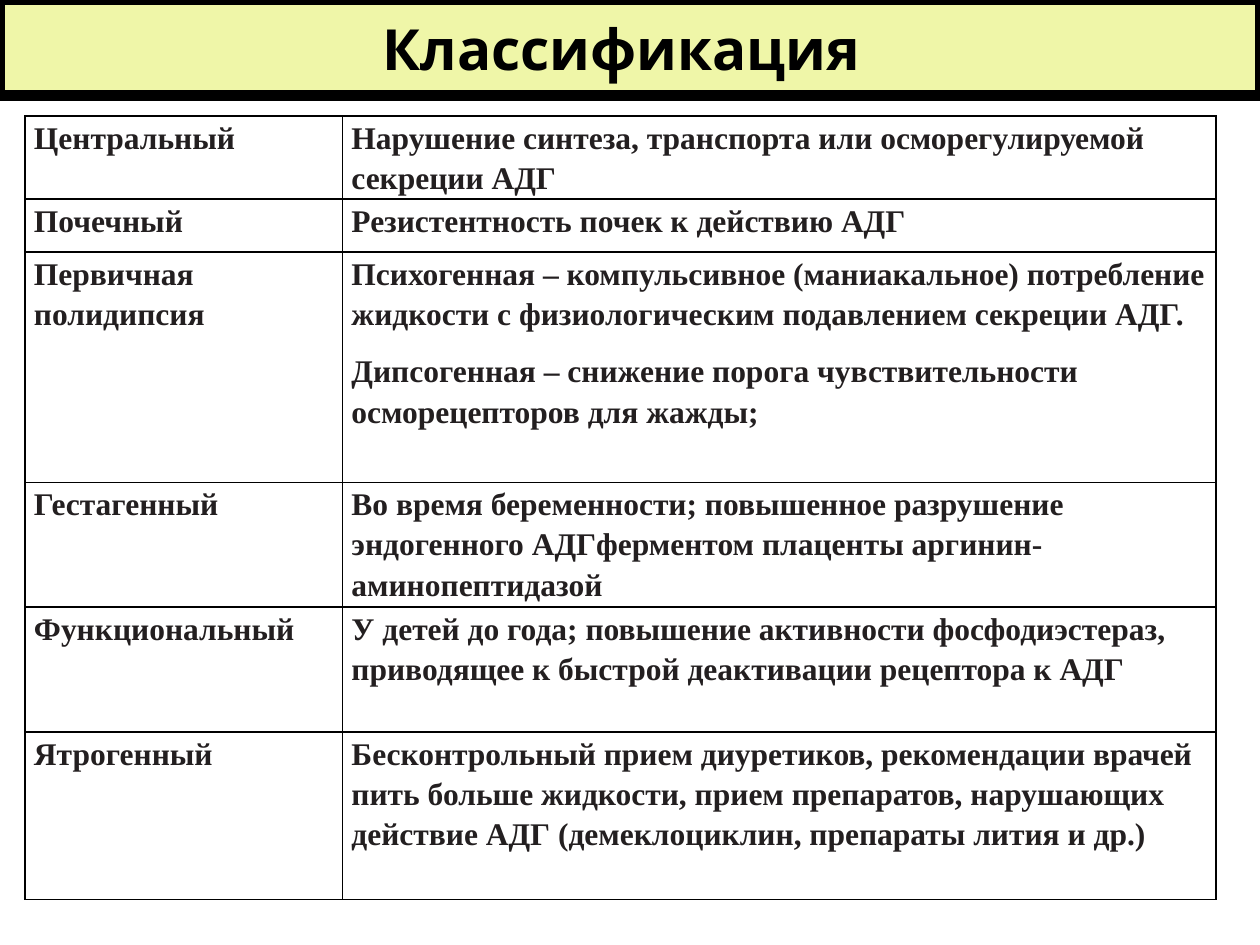
from dataclasses import dataclass

from lxml.etree import SubElement
from pptx import Presentation
from pptx.dml.color import RGBColor
from pptx.enum.shapes import MSO_SHAPE
from pptx.enum.text import MSO_ANCHOR, PP_ALIGN
from pptx.oxml.ns import qn
from pptx.util import Inches, Pt


@dataclass(frozen=True)
class Theme:
    banner: RGBColor = RGBColor.from_string("EFF6A8")
    black: RGBColor = RGBColor.from_string("000000")
    body: RGBColor = RGBColor.from_string("231F20")
    title_font: str = "Quicksand"
    body_font: str = "Times New Roman"
    title_size: Pt = Pt(32.4)
    body_size: Pt = Pt(18)


THEME = Theme()

# Row height in inches, type, paragraphs of its description
CLASSIFICATION = [
    (0.66, "Центральный",
     ["Нарушение синтеза, транспорта или осморегулируемой секреции АДГ"]),
    (0.42, "Почечный", ["Резистентность почек к действию АДГ"]),
    (1.83, "Первичная полидипсия",
     ["Психогенная – компульсивное (маниакальное) потребление жидкости "
      "с физиологическим подавлением секреции АДГ.",
      "Дипсогенная – снижение порога чувствительности осморецепторов для жажды;"]),
    (0.99, "Гестагенный",
     ["Во время беременности; повышенное разрушение эндогенного "
      "АДГферментом плаценты аргинин-аминопептидазой"]),
    (0.99, "Функциональный",
     ["У детей до года; повышение активности фосфодиэстераз, "
      "приводящее к быстрой деактивации рецептора к АДГ"]),
    (1.33, "Ятрогенный",
     ["Бесконтрольный прием диуретиков, рекомендации врачей пить больше "
      "жидкости, прием препаратов, нарушающих действие АДГ "
      "(демеклоциклин, препараты лития и др.)"]),
]
COLUMN_WIDTHS = [2.52, 6.93]


def style_font(font, name, size, color):
    font.name, font.size, font.bold = name, size, True
    font.color.rgb = color


def fill_cell(cell, texts):
    """Write the paragraphs and draw a thin border on all four sides."""
    cell.margin_left = cell.margin_right = Inches(0.07)
    cell.margin_top = cell.margin_bottom = 0
    frame = cell.text_frame
    frame.text = "\n".join(texts)
    for paragraph in frame.paragraphs:
        paragraph.line_spacing = 1.15
        paragraph.space_after = Pt(10)
        style_font(paragraph.font, THEME.body_font, THEME.body_size, THEME.body)
    properties = cell._tc.get_or_add_tcPr()
    for side in ("a:lnL", "a:lnR", "a:lnT", "a:lnB"):
        border = SubElement(properties, qn(side), w=str(Pt(1)))
        solid = SubElement(border, qn("a:solidFill"))
        SubElement(solid, qn("a:srgbClr"), val=str(THEME.black))
    cell.fill.background()


prs = Presentation()
prs.slide_width, prs.slide_height = Inches(10), Inches(7.5)
slide = prs.slides.add_slide(prs.slide_layouts[6])

banner = slide.shapes.add_shape(MSO_SHAPE.RECTANGLE, 0, 0, Inches(10), Inches(0.76))
banner.shadow.inherit = False
banner.fill.solid()
banner.fill.fore_color.rgb = THEME.banner
banner.line.color.rgb = THEME.black
banner.line.width = Pt(6)
heading = banner.text_frame
heading.word_wrap = True
heading.vertical_anchor = MSO_ANCHOR.MIDDLE
heading.margin_top = heading.margin_bottom = 0
heading.margin_right = Inches(0.23)
heading.text = "Классификация"
heading.paragraphs[0].alignment = PP_ALIGN.CENTER
style_font(heading.paragraphs[0].font, THEME.title_font, THEME.title_size, THEME.black)

table = slide.shapes.add_table(
    len(CLASSIFICATION), len(COLUMN_WIDTHS), Inches(0.2), Inches(0.92),
    Inches(sum(COLUMN_WIDTHS)), Inches(sum(row[0] for row in CLASSIFICATION)),
).table
table.first_row = table.horz_banding = False
for column, width in zip(table.columns, COLUMN_WIDTHS):
    column.width = Inches(width)
for index, (height, kind, description) in enumerate(CLASSIFICATION):
    table.rows[index].height = Inches(height)
    fill_cell(table.cell(index, 0), [kind])
    fill_cell(table.cell(index, 1), description)

prs.save("out.pptx")
